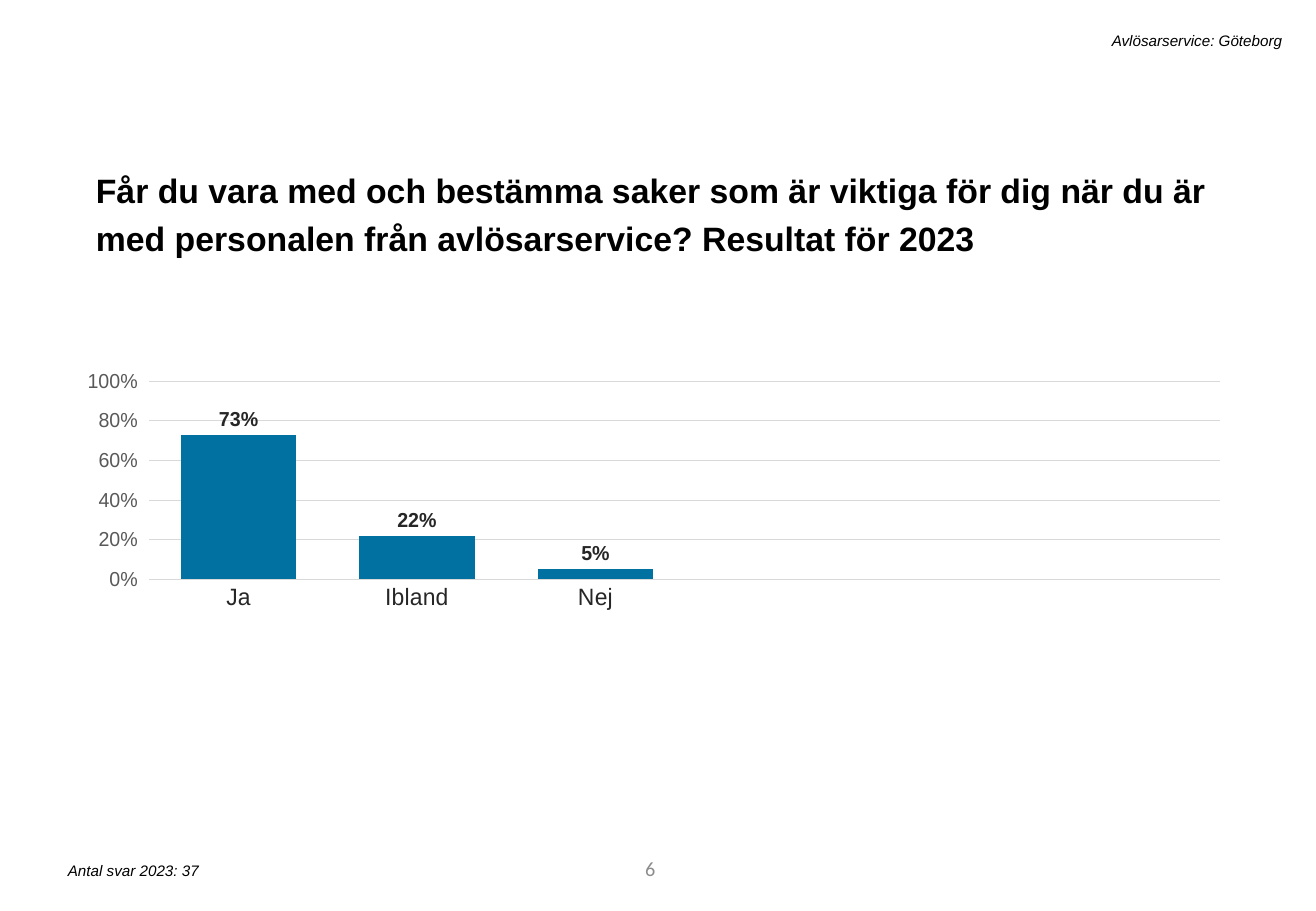
from lxml import etree
from pptx import Presentation
from pptx import util as u
from pptx.chart import data
from pptx.dml.color import RGBColor
from pptx.enum import chart as ch
from pptx.enum import text
from pptx.oxml import ns

BLACK = RGBColor(0x00, 0x00, 0x00)
DARK = RGBColor(0x26, 0x26, 0x26)
MID = RGBColor(0x59, 0x59, 0x59)
PAGE_GREY = RGBColor(0x8C, 0x8C, 0x8C)
GRID = RGBColor(0xD9, 0xD9, 0xD9)
BLUE = RGBColor(0x00, 0x71, 0xA1)
LEFT, RIGHT = text.PP_ALIGN.LEFT, text.PP_ALIGN.RIGHT
TOP, MIDDLE = text.MSO_ANCHOR.TOP, text.MSO_ANCHOR.MIDDLE


def style_font(font, size, color, name="Arial", bold=False, italic=False):
    font.size, font.name = u.Pt(size), name
    font.bold, font.italic = bold, italic
    font.color.rgb = color


prs = Presentation()
prs.slide_width, prs.slide_height = u.Cm(27.51), u.Cm(19.05)
slide = prs.slides.add_slide(prs.slide_layouts[5])

# Question as title
question = slide.shapes.title
question.left, question.top = u.Cm(1.75), u.Cm(3.25)
question.width, question.height = u.Cm(23.88), u.Cm(1.19)
frame = question.text_frame
frame.word_wrap = True
frame.vertical_anchor = TOP
frame.auto_size = text.MSO_AUTO_SIZE.SHAPE_TO_FIT_TEXT
paragraph = frame.paragraphs[0]
paragraph.alignment = LEFT
paragraph.line_spacing = 1.2
paragraph.space_before = u.Pt(10)
run = paragraph.add_run()
run.text = ("Får du vara med och bestämma saker som är viktiga för dig när du är "
            "med personalen från avlösarservice? Resultat för 2023")
style_font(run.font, 20, BLACK, bold=True)

# Answer shares
answers = data.CategoryChartData(number_format="0%")
answers.categories = ["Ja", "Ibland", "Nej", "", "", ""]
answers.add_series("Series 1", [0.73, 0.22, 0.05, None, None, None])
chart = slide.shapes.add_chart(
    ch.XL_CHART_TYPE.COLUMN_CLUSTERED,
    u.Cm(1.83), u.Cm(6.43), u.Cm(23.88), u.Cm(10.03), answers).chart
chart.has_legend = False
chart.has_title = False
style_font(chart.font, 10, BLACK)

# Columns and their labels
plot = chart.plots[0]
plot.gap_width = 55
plot.vary_by_categories = False
shares = plot.series[0]
shares.format.fill.solid()
shares.format.fill.fore_color.rgb = BLUE
labels = shares.data_labels
labels.show_value = True
labels.position = ch.XL_LABEL_POSITION.OUTSIDE_END
labels.number_format, labels.number_format_is_linked = "0%", False
style_font(labels.font, 12, DARK, bold=True)

# Axes
answer_axis = chart.category_axis
answer_axis.major_tick_mark = ch.XL_TICK_MARK.NONE
style_font(answer_axis.tick_labels.font, 14, DARK)
share_axis = chart.value_axis
share_axis.minimum_scale, share_axis.maximum_scale = 0, 1
share_axis.major_unit = 0.2
share_axis.major_tick_mark = ch.XL_TICK_MARK.OUTSIDE
share_axis.format.line.fill.background()
share_axis.tick_labels.number_format = "0%"
share_axis.tick_labels.number_format_is_linked = False
style_font(share_axis.tick_labels.font, 12, MID)
for line in (answer_axis.format.line, share_axis.major_gridlines.format.line):
    line.color.rgb = GRID
    line.width = u.Pt(0.75)

# Inner plot area as shares of the chart frame
plot_area = chart._chartSpace.chart.plotArea
for old_layout in plot_area.findall(ns.qn("c:layout")):
    plot_area.remove(old_layout)
layout = etree.Element(ns.qn("c:layout"))
manual = etree.SubElement(layout, ns.qn("c:manualLayout"))
for tag, value in (("layoutTarget", "inner"), ("xMode", "edge"), ("yMode", "edge"),
                   ("x", 0.025), ("y", 0.154), ("w", 0.966), ("h", 0.413)):
    etree.SubElement(manual, ns.qn("c:" + tag)).set("val", str(value))
plot_area.insert(0, layout)

# Page number, service and number of answers
small_texts = [
    ("6", 7.75, 17.65, 6.2, 1.02, RIGHT, MIDDLE, 12, PAGE_GREY, "Calibri", False),
    ("Avlösarservice: Göteborg", 4.55, 0.53, 22.5, 0.64, RIGHT, TOP, 9, BLACK, "Arial", True),
    ("Antal svar 2023: 37", 1.17, 17.88, 11.2, 0.64, LEFT, TOP, 9, BLACK, "Arial", True),
]
for words, x, y, w, h, align, anchor, size, color, face, italic in small_texts:
    frame = slide.shapes.add_textbox(u.Cm(x), u.Cm(y), u.Cm(w), u.Cm(h)).text_frame
    frame.word_wrap = True
    frame.vertical_anchor = anchor
    frame.paragraphs[0].alignment = align
    run = frame.paragraphs[0].add_run()
    run.text = words
    style_font(run.font, size, color, face, italic=italic)

prs.save("out.pptx")
